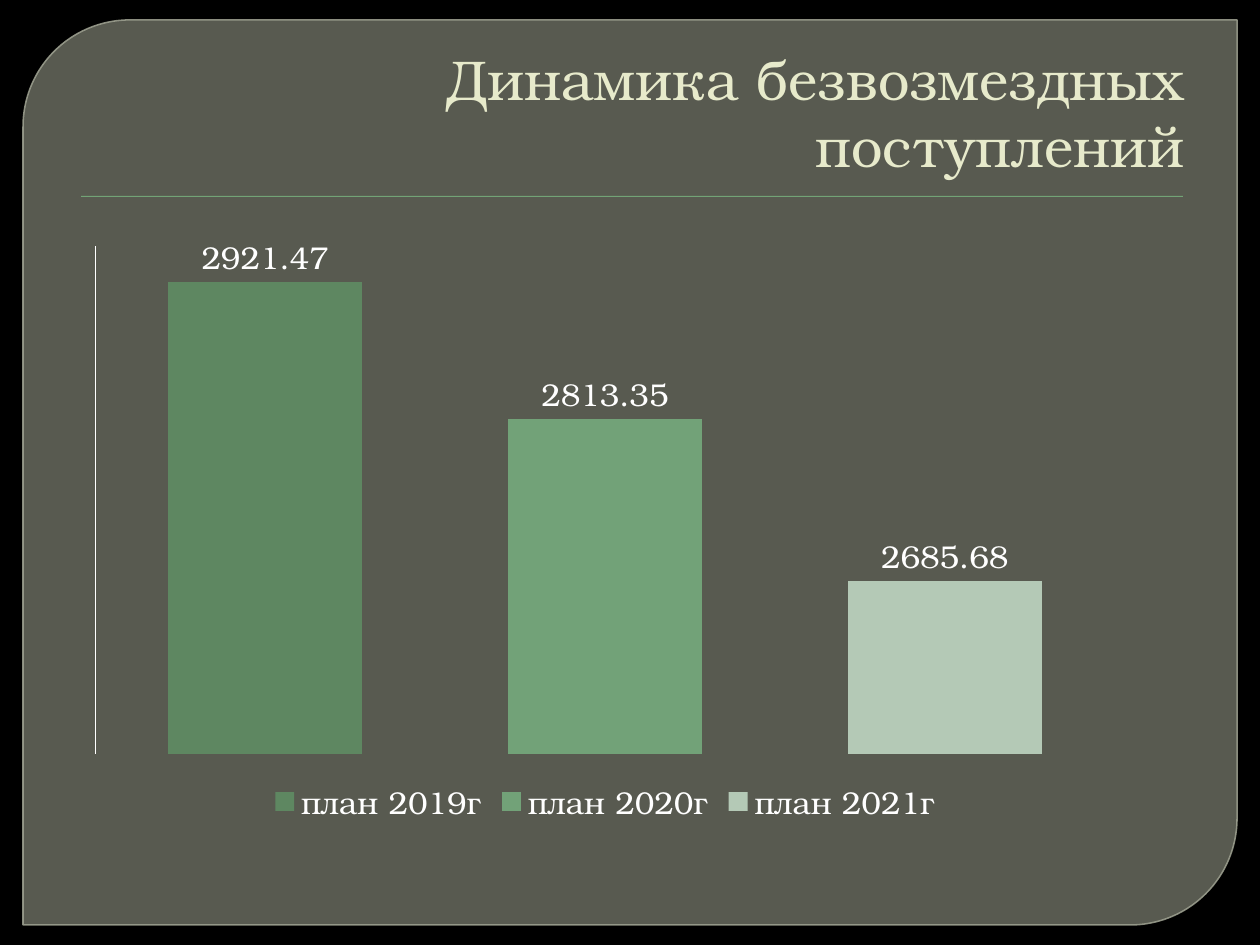
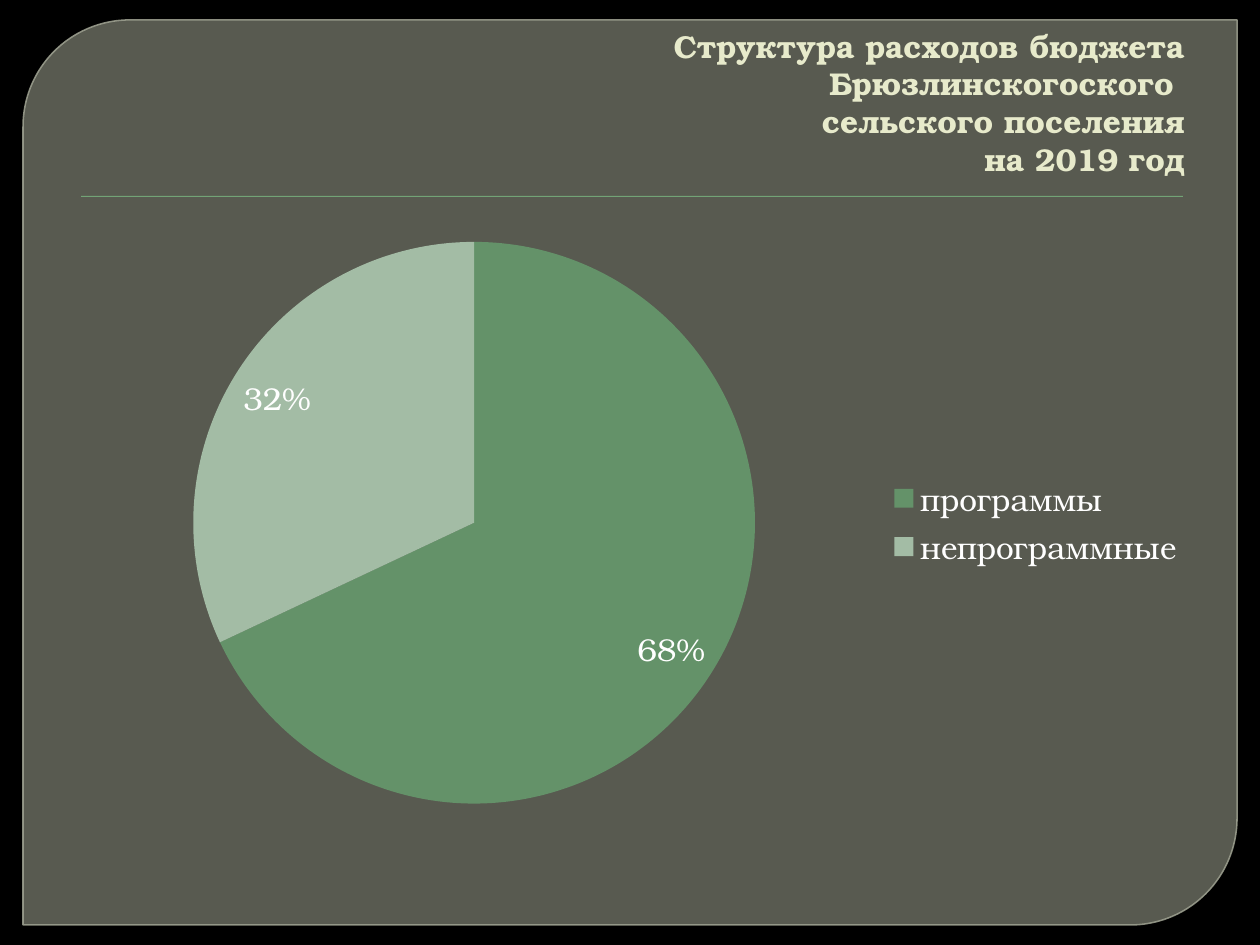
from lxml import etree
from pptx import Presentation
from pptx.chart.data import CategoryChartData
from pptx.dml.color import RGBColor
from pptx.enum.chart import (XL_CHART_TYPE, XL_LABEL_POSITION,
                             XL_LEGEND_POSITION, XL_TICK_LABEL_POSITION,
                             XL_TICK_MARK)
from pptx.enum.shapes import MSO_SHAPE
from pptx.enum.text import MSO_ANCHOR, PP_ALIGN
from pptx.oxml import parse_xml
from pptx.oxml.ns import nsdecls, qn
from pptx.util import Inches, Pt

COLUMNS, PIE = XL_CHART_TYPE.COLUMN_CLUSTERED, XL_CHART_TYPE.PIE
OUTSIDE, INSIDE = XL_LABEL_POSITION.OUTSIDE_END, XL_LABEL_POSITION.INSIDE_END
BOTTOM, RIGHT = XL_LEGEND_POSITION.BOTTOM, XL_LEGEND_POSITION.RIGHT
NO_LABELS, NO_TICKS = XL_TICK_LABEL_POSITION.NONE, XL_TICK_MARK.NONE

SCALE = Inches(1) / 126
SLIDE_SIZE = (1260, 945)
FONT = "TeX Gyre Bonum"
COLORS = {
    "background": "000000", "panel": "888B7B", "panel_edge": "9DA090",
    "rule": "72A376", "title": "E7EACB", "text": "FFFFFF",
    "plan_2019": "5E8761", "plan_2020": "72A278", "plan_2021": "B4C9B6",
    "programs": "649269", "other": "A3BCA5",
}


def px(*lengths):
    return [round(length * SCALE) for length in lengths]


def rgb(name):
    return RGBColor.from_string(COLORS[name])


def set_all(target, formats):
    for attribute, value in formats.items():
        setattr(target, attribute, value)


def paint(fill, color, alpha=100):
    fill.solid()
    fill.fore_color.rgb = rgb(color)
    return alpha


def set_alpha(properties, percent):
    """Make the first solid fill below the given element translucent."""
    color = properties.find(qn("a:solidFill"))[0]
    etree.SubElement(color, qn("a:alpha"), val=str(percent * 1000))


def add_frame(slide):
    """Black background, rounded panel and the rule below the title."""
    paint(slide.background.fill, "background")
    panel = slide.shapes.add_shape(MSO_SHAPE.ROUND_2_DIAG_RECTANGLE,
                                   *px(23, 20, 1214, 905))
    panel.adjustments[0], panel.adjustments[1] = 0.118, 0
    panel.shadow.inherit = False
    paint(panel.fill, "panel")
    paint(panel.line.fill, "panel_edge")
    panel.line.width = Pt(0.87)
    properties = panel._element.spPr
    set_alpha(properties, 65)
    set_alpha(properties.find(qn("a:ln")), 88)

    rule = slide.shapes.add_shape(MSO_SHAPE.RECTANGLE, *px(81, 196, 1102, 1))
    paint(rule.fill, "rule")
    rule.line.fill.background()
    rule.shadow.inherit = False
    rule._element.spPr.find(qn("a:effectLst")).append(parse_xml(
        f'<a:outerShdw {nsdecls("a")} blurRad="12700" dist="12700" '
        'dir="5400000"><a:srgbClr val="000000"><a:alpha val="75000"/>'
        '</a:srgbClr></a:outerShdw>'))


def add_title(slide, box, lines, size, bold=False):
    frame = slide.shapes.add_textbox(*px(*box)).text_frame
    set_all(frame, {"word_wrap": True, "vertical_anchor": MSO_ANCHOR.BOTTOM})
    paragraph = frame.paragraphs[0]
    paragraph.alignment = PP_ALIGN.RIGHT
    for number, line in enumerate(lines):
        if number:
            paragraph.add_line_break()
        run = paragraph.add_run()
        run.text = line
        set_all(run.font, {"name": FONT, "size": Pt(size), "bold": bold})
        run.font.color.rgb = rgb("title")


def set_plot_box(chart, box, plot):
    """Fix the inner plot area, given in px relative to the chart box."""
    fractions = [plot[0] / box[2], plot[1] / box[3],
                 plot[2] / box[2], plot[3] / box[3]]
    values = "".join(f'<c:{tag} val="{value:.3f}"/>'
                     for tag, value in zip("xywh", fractions))
    area = chart._chartSpace.chart.plotArea
    for layout in area.findall(qn("c:layout")):
        area.remove(layout)
    area.insert(0, parse_xml(
        f'<c:layout {nsdecls("c")}><c:manualLayout>'
        '<c:layoutTarget val="inner"/><c:xMode val="edge"/>'
        f'<c:yMode val="edge"/>{values}</c:manualLayout></c:layout>'))


def add_chart(slide, kind, box, plot_box, parts, number_format, label_place,
              legend_place):
    """Chart with one coloured point per (category, value, colour)."""
    data = CategoryChartData(number_format=number_format)
    data.categories = [category for category, _, _ in parts]
    data.add_series("Series 1", [value for _, value, _ in parts])
    chart = slide.shapes.add_chart(kind, *px(*box), data).chart
    set_all(chart, {"has_title": False, "has_legend": True})
    set_all(chart.font, {"name": FONT, "size": Pt(18)})
    chart.font.color.rgb = rgb("text")
    set_all(chart.legend, {"position": legend_place,
                           "include_in_layout": False})
    plot = chart.plots[0]
    set_all(plot, {"vary_by_categories": True, "has_data_labels": True})
    set_all(plot.data_labels, {
        "show_value": True, "show_percentage": False, "position": label_place,
        "number_format": number_format, "number_format_is_linked": False})
    for index, (_, _, color) in enumerate(parts):
        paint(plot.series[0].points[index].format.fill, color)
    set_plot_box(chart, box, plot_box)
    return chart


def build_income_slide(slide):
    add_frame(slide)
    add_title(slide, (74, 76, 1123, 109),
              ["Динамика безвозмездных", "поступлений"], 32)
    chart = add_chart(
        slide, COLUMNS, (74, 234, 1062, 595), (21, 12, 1020, 508),
        [("план 2019г", 2921.47, "plan_2019"),
         ("план 2020г", 2813.35, "plan_2020"),
         ("план 2021г", 2685.68, "plan_2021")],
        "General", OUTSIDE, BOTTOM)
    chart.plots[0].gap_width = 75
    chart.category_axis.visible = False
    chart.category_axis.has_major_gridlines = False
    set_all(chart.value_axis, {
        "minimum_scale": 2550, "maximum_scale": 2950, "major_unit": 50,
        "has_major_gridlines": False, "tick_label_position": NO_LABELS,
        "major_tick_mark": NO_TICKS, "minor_tick_mark": NO_TICKS})
    axis_line = chart.value_axis.format.line
    paint(axis_line.fill, "text")
    axis_line.width = Pt(0.5)


def build_spending_slide(slide):
    add_frame(slide)
    add_title(slide, (105, 55, 1092, 129),
              ["Структура расходов бюджета", "Брюзлинскогоского ",
               "сельского поселения", "на 2019 год"], 18, bold=True)
    add_chart(slide, PIE, (64, 224, 1133, 597), (129, 18, 562, 562),
              [("программы", 0.68, "programs"),
               ("непрограммные", 0.32, "other")],
              "0%", INSIDE, RIGHT)


def main():
    deck = Presentation()
    deck.slide_width, deck.slide_height = px(*SLIDE_SIZE)
    for build in (build_income_slide, build_spending_slide):
        build(deck.slides.add_slide(deck.slide_layouts[6]))
    deck.save("out.pptx")


if __name__ == "__main__":
    main()
